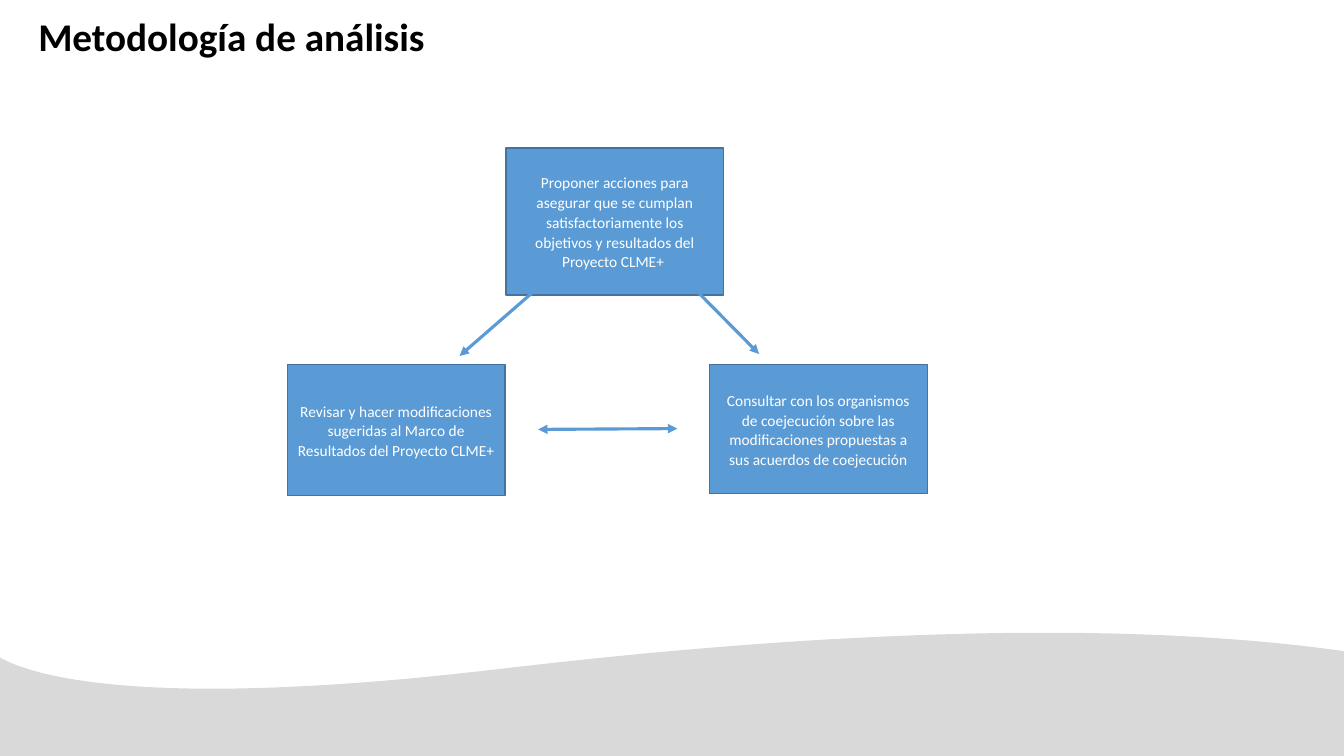
from pptx import Presentation
from pptx.dml.color import RGBColor
from pptx.enum.shapes import MSO_CONNECTOR as CONN, MSO_SHAPE as SHAPE
from pptx.enum.text import MSO_ANCHOR as ANCHOR, PP_ALIGN as ALIGN
from pptx.oxml.ns import qn
from pptx.util import Cm, Pt
from lxml.etree import SubElement

TITLE = "Metodología de análisis"
BOX_W = 5.49
BOXES = [
    (12.75, 3.73, 3.71, "Proponer acciones para asegurar que se cumplan satisfactoriamente "
                        "los objetivos y resultados del Proyecto CLME+ "),
    (7.24, 9.19, 3.3, "Revisar y hacer modificaciones sugeridas al Marco de Resultados "
                      "del Proyecto CLME+"),
    (17.88, 9.19, 3.25, "Consultar con los organismos de coejecución sobre las modificaciones "
                        "propuestas a sus acuerdos de coejecución"),
]
ARROWS = [
    ((13.72, 7.11), (11.58, 8.97), ["tailEnd"]),
    ((17.37, 7.14), (19.13, 8.92), ["tailEnd"]),
    ((13.56, 10.82), (17.07, 10.8), ["headEnd", "tailEnd"]),
]
SLIDE_W, SLIDE_H = 33.87, 19.05
WAVE_START = (33.87, 16.41)
WAVE_CURVES = [
    ((29.59, 15.8), (22.91, 15.65), (12.75, 16.84)),
    ((3.38, 17.96), (0.66, 16.97), (-0.05, 16.54)),
]
WAVE_STEPS = 40
BLUE, EDGE, GRAY = "5B9BD5", "43739E", "D9D9D9"
TITLE_FONT = {"name": "Calibri", "size": Pt(28), "bold": True}
BOX_FONT = {"name": "Calibri", "size": Pt(11), "bold": False}
BOX_PARA = {"alignment": ALIGN.CENTER, "line_spacing": 1.07, "space_after": Pt(8)}


def apply(obj, values):
    for key, value in values.items():
        setattr(obj, key, value)


def color(fmt, hex_code):
    fmt.rgb = RGBColor.from_string(hex_code)


def fill(sp, hex_code):
    sp.fill.solid()
    color(sp.fill.fore_color, hex_code)
    sp.shadow.inherit = False


def write(tf, text, para, font, hex_code):
    p = tf.paragraphs[0]
    apply(p, para)
    r = p.add_run()
    r.text = text
    apply(r.font, font)
    color(r.font.color, hex_code)


def wave_points():
    start = WAVE_START
    points = [start]
    for a, b, end in WAVE_CURVES:
        for i in range(1, WAVE_STEPS + 1):
            t = i / WAVE_STEPS
            u = 1 - t
            points.append(tuple(
                u**3 * p0 + 3 * u * u * t * p1 + 3 * u * t * t * p2 + t**3 * p3
                for p0, p1, p2, p3 in zip(start, a, b, end)))
        start = end
    return points + [(start[0], SLIDE_H)]


def add_wave(s):
    builder = s.shapes.build_freeform(Cm(SLIDE_W), Cm(SLIDE_H))
    builder.add_line_segments([(Cm(x), Cm(y)) for x, y in wave_points()], close=True)
    sp = builder.convert_to_shape()
    fill(sp, GRAY)
    sp.line.fill.background()


def add_title(s):
    sp = s.shapes.title
    apply(sp, {"left": Cm(0.71), "top": Cm(0.18), "width": Cm(14.27), "height": Cm(1.45)})
    apply(sp.text_frame, {"word_wrap": True, "vertical_anchor": ANCHOR.MIDDLE})
    write(sp.text_frame, TITLE, {"alignment": ALIGN.LEFT}, TITLE_FONT, "000000")


def add_box(s, x, y, h, text):
    sp = s.shapes.add_shape(SHAPE.RECTANGLE, Cm(x), Cm(y), Cm(BOX_W), Cm(h))
    fill(sp, BLUE)
    color(sp.line.color, EDGE)
    sp.line.width = Pt(1)
    apply(sp.text_frame, {"word_wrap": True, "vertical_anchor": ANCHOR.MIDDLE})
    write(sp.text_frame, text, BOX_PARA, BOX_FONT, "FFFFFF")


def add_arrow(s, start, end, heads):
    cx = s.shapes.add_connector(CONN.STRAIGHT, *map(Cm, start + end))
    color(cx.line.color, BLUE)
    cx.line.width = Pt(2.25)
    ln = cx.line._get_or_add_ln()
    for head in heads:
        SubElement(ln, qn("a:" + head), type="triangle")
    SubElement(cx._element.spPr, qn("a:effectLst"))


def main():
    prs = Presentation()
    apply(prs, {"slide_width": Cm(SLIDE_W), "slide_height": Cm(SLIDE_H)})
    s = prs.slides.add_slide(prs.slide_layouts[5])
    add_wave(s)
    add_title(s)
    for box in BOXES:
        add_box(s, *box)
    for arrow in ARROWS:
        add_arrow(s, *arrow)
    prs.save("out.pptx")


if __name__ == "__main__":
    main()
